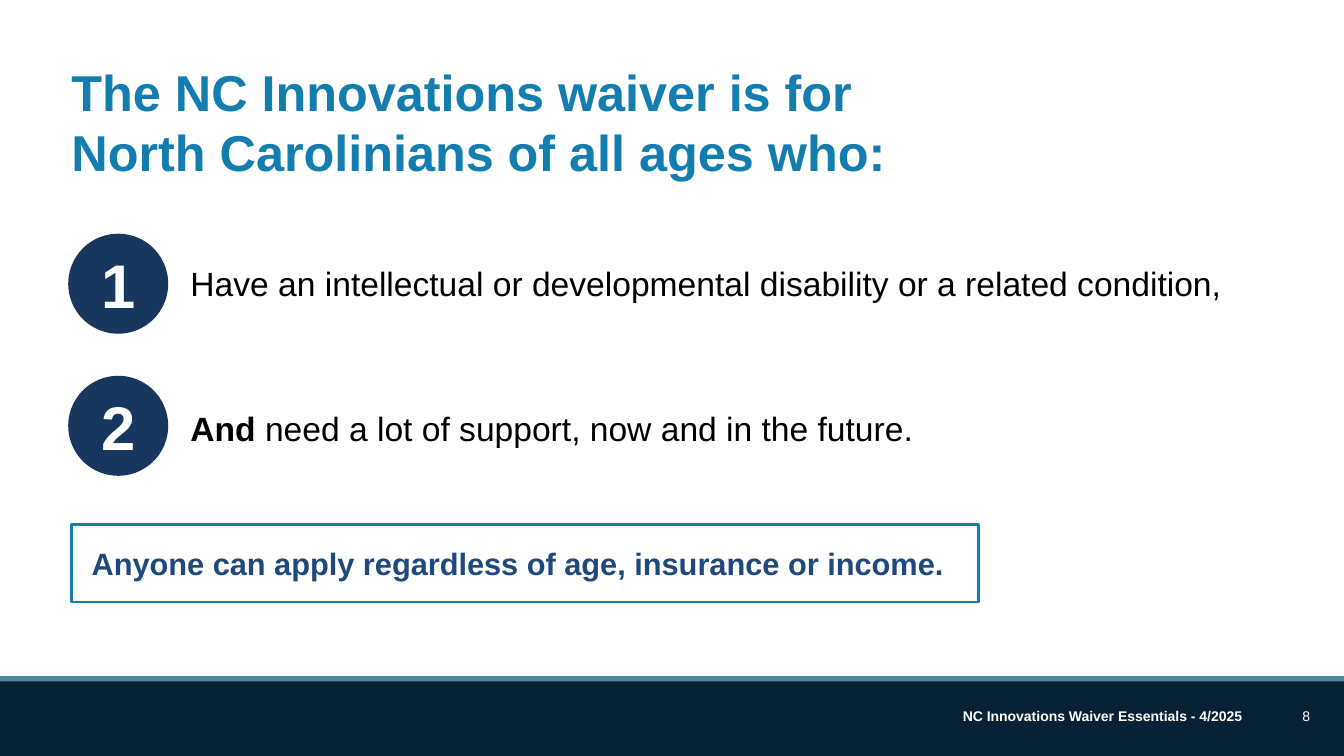
from pptx import Presentation
from pptx.dml.color import RGBColor
from pptx.enum.shapes import MSO_SHAPE
from pptx.enum.text import MSO_ANCHOR, MSO_AUTO_SIZE, PP_ALIGN
from pptx.util import Cm, Pt

RECT, OVAL = MSO_SHAPE.RECTANGLE, MSO_SHAPE.OVAL
TOP, MIDDLE = MSO_ANCHOR.TOP, MSO_ANCHOR.MIDDLE
LEFT, CENTER, RIGHT = PP_ALIGN.LEFT, PP_ALIGN.CENTER, PP_ALIGN.RIGHT

BLUE = RGBColor(0x14, 0x7D, 0xAF)
NAVY = RGBColor(0x17, 0x37, 0x5E)
CALLOUT_BLUE = RGBColor(0x1F, 0x49, 0x7D)
FOOTER_DARK = RGBColor(0x07, 0x22, 0x35)
FOOTER_EDGE = RGBColor(0x52, 0x84, 0x9C)
WHITE = RGBColor(0xFF, 0xFF, 0xFF)
BLACK = RGBColor(0, 0, 0)

WIDTH, HEIGHT = 33.87, 19.05
NO_INSETS = (0, 0, 0, 0)


class WaiverSlide:
    font = "Arial"

    def __init__(self, prs):
        self.slide = prs.slides.add_slide(prs.slide_layouts[5])

    def set_text(self, sp, parts, size, color, align=LEFT, anchor=TOP,
                 insets=NO_INSETS, spacing=None):
        """Fill one paragraph from (text, bold) parts; insets are in cm."""
        tf = sp.text_frame
        tf.word_wrap = True
        tf.auto_size = MSO_AUTO_SIZE.NONE
        tf.vertical_anchor = anchor
        (tf.margin_left, tf.margin_top,
         tf.margin_right, tf.margin_bottom) = [Cm(i) for i in insets]
        p = tf.paragraphs[0]
        p.alignment = align
        if spacing:
            p.line_spacing = Pt(spacing)
        for text, bold in parts:
            first = len(p.runs)
            for i, line in enumerate(text.split("\n")):
                if i:
                    p.add_line_break()
                p.add_run().text = line
            for r in p.runs[first:]:
                r.font.name = self.font
                r.font.size = Pt(size)
                r.font.bold = bold
                r.font.color.rgb = color

    def title(self, text, x, y, w, h):
        sp = self.slide.shapes.title
        sp.left, sp.top, sp.width, sp.height = Cm(x), Cm(y), Cm(w), Cm(h)
        self.set_text(sp, [(text, True)], 36, BLUE, anchor=MIDDLE, spacing=43)

    def shape(self, kind, x, y, w, h, fill=None, line=None):
        sp = self.slide.shapes.add_shape(kind, Cm(x), Cm(y), Cm(w), Cm(h))
        sp.shadow.inherit = False
        if fill is None:
            sp.fill.background()
        else:
            sp.fill.solid()
            sp.fill.fore_color.rgb = fill
        if line is None:
            sp.line.fill.background()
        else:
            sp.line.color.rgb = line
            sp.line.width = Pt(2)
        return sp

    def text(self, parts, x, y, w, h, size, color, **style):
        sp = self.slide.shapes.add_textbox(Cm(x), Cm(y), Cm(w), Cm(h))
        self.set_text(sp, parts, size, color, **style)

    def criterion(self, number, parts, y, text_y):
        badge = self.shape(OVAL, 1.72, y, 2.52, 2.52, fill=NAVY)
        self.set_text(badge, [(str(number), True)], 44, WHITE, CENTER, MIDDLE)
        self.text(parts, 4.8, text_y, 27.08, 1.02, 24, BLACK, spacing=30.8)

    def callout(self, text, x, y, w, h):
        sp = self.shape(RECT, x, y, w, h, line=BLUE)
        self.set_text(sp, [(text, True)], 22, CALLOUT_BLUE,
                      insets=(0.51, 0.51, 0.25, 0.51))

    def footer(self, text, page):
        for y, color in ((17.04, FOOTER_EDGE), (17.17, FOOTER_DARK)):
            self.shape(RECT, 0, y, WIDTH, HEIGHT - y, fill=color)
        self.text([(page, False)], 29.21, 17.53, 3.81, 1.02, 10, WHITE,
                  align=RIGHT, anchor=MIDDLE)
        self.text([(text, True)], 14.43, 17.7, 17.12, 0.69, 10, WHITE,
                  align=RIGHT, insets=(0.25, 0.13, 0.25, 0.13))


def main():
    prs = Presentation()
    prs.slide_width, prs.slide_height = Cm(WIDTH), Cm(HEIGHT)
    s = WaiverSlide(prs)
    s.footer("NC Innovations Waiver Essentials - 4/2025", "8")
    s.title("The NC Innovations waiver is for\n"
            "North Carolinians of all ages who:", 1.8, 1.47, 31.47, 3.2)
    s.criterion(1, [("Have an intellectual or developmental disability "
                     "or a related condition,", False)], 5.89, 6.55)
    s.criterion(2, [("And ", True),
                    ("need a lot of support, now and in the future.", False)],
                9.47, 10.21)
    s.callout("Anyone can apply regardless of age, insurance or income.",
              1.8, 13.21, 22.86, 1.96)
    prs.save("out.pptx")


if __name__ == "__main__":
    main()
